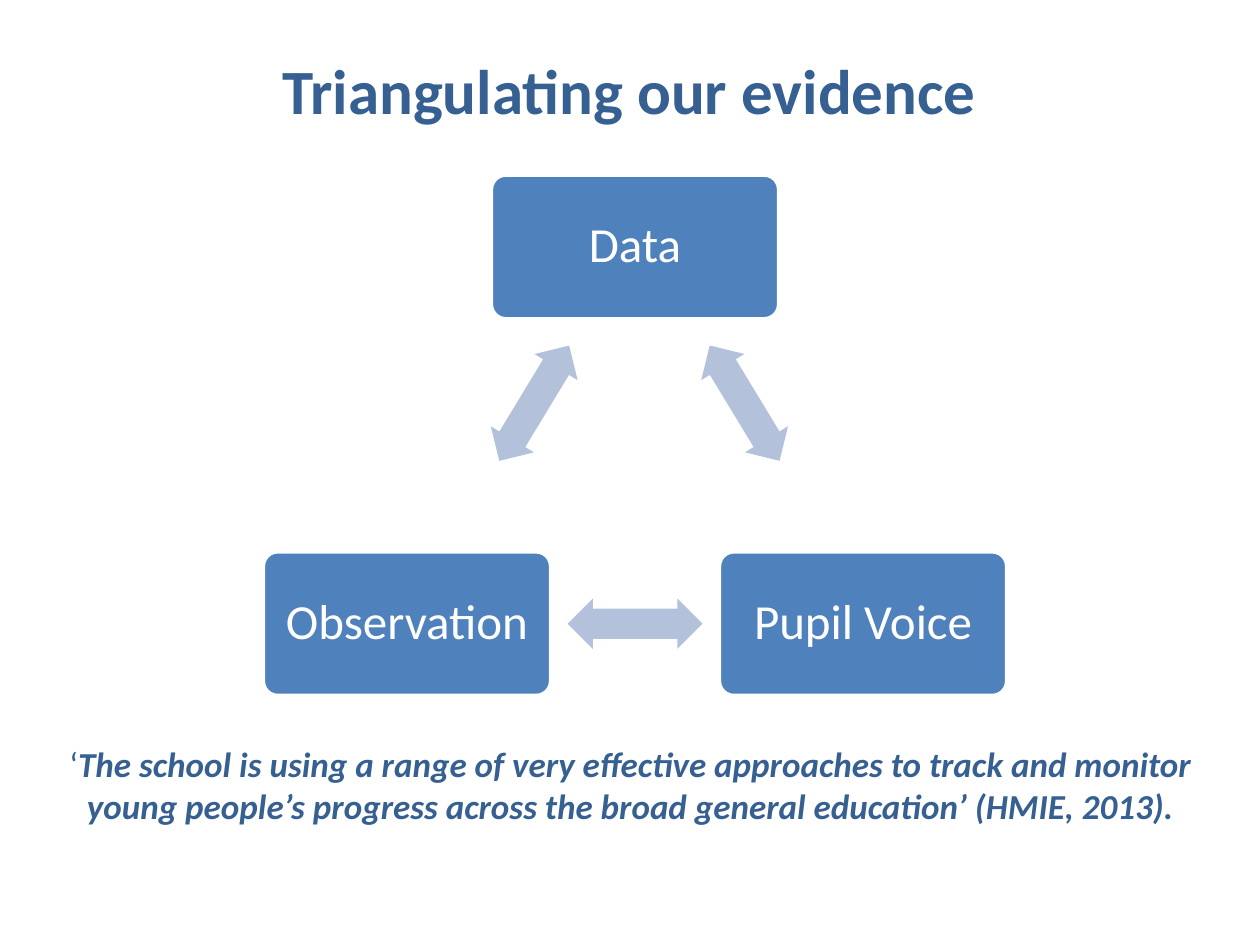
from pptx import Presentation
from pptx.dml.color import RGBColor
from pptx.enum.shapes import MSO_SHAPE as SHAPE
from pptx.enum.text import MSO_ANCHOR as ANCHOR, PP_ALIGN as ALIGN
from pptx.util import Inches, Pt

FONT = "Calibri"
NAVY, BLUE, PALE, WHITE = "376092", "4F81BD", "B3C1DB", "FFFFFF"

TITLE = "Triangulating our evidence"
QUOTE = ("The school is using a range of very effective approaches to track and "
         "monitor young people’s progress across the broad general education’ "
         "(HMIE, 2013).")
BOX_W, BOX_H = 2.28, 1.14
ARROW_W, ARROW_H = 1.07, 0.4
BOXES = [("Data", 5.04, 1.96), ("Pupil Voice", 6.85, 4.95), ("Observation", 3.23, 4.95)]
ARROWS = [(5.91, 3.2, 58.8), (5.04, 4.95, 180), (4.24, 3.2, 301.2)]


def rgb(value):
    return RGBColor.from_string(value)


def add_run(p, text, size, color, bold=False, italic=False):
    r = p.add_run()
    r.text = text
    f = r.font
    f.name, f.size, f.bold, f.italic = FONT, Pt(size), bold, italic
    f.color.rgb = rgb(color)


def add_text(s, left, top, width, height):
    tf = s.shapes.add_textbox(*map(Inches, (left, top, width, height))).text_frame
    tf.word_wrap = True
    p = tf.paragraphs[0]
    p.alignment = ALIGN.CENTER
    return p


def add_centred(s, kind, cx, cy, width, height, fill):
    sp = s.shapes.add_shape(kind, Inches(cx - width / 2), Inches(cy - height / 2),
                            Inches(width), Inches(height))
    sp.shadow.inherit = False
    sp.fill.solid()
    sp.fill.fore_color.rgb = rgb(fill)
    return sp


def add_box(s, label, cx, cy):
    sp = add_centred(s, SHAPE.ROUNDED_RECTANGLE, cx, cy, BOX_W, BOX_H, BLUE)
    sp.adjustments[0] = 0.1
    sp.line.color.rgb = rgb(WHITE)
    sp.line.width = Pt(2)
    tf = sp.text_frame
    tf.word_wrap = True
    tf.vertical_anchor = ANCHOR.MIDDLE
    tf.margin_left = tf.margin_right = tf.margin_top = tf.margin_bottom = Inches(0.12)
    p = tf.paragraphs[0]
    p.alignment = ALIGN.CENTER
    p.line_spacing = 0.9
    add_run(p, label, 28, WHITE)


def add_arrow(s, cx, cy, angle):
    sp = add_centred(s, SHAPE.LEFT_RIGHT_ARROW, cx, cy, ARROW_W, ARROW_H, PALE)
    sp.adjustments[0], sp.adjustments[1] = 0.6, 0.5
    sp.line.fill.background()
    sp.rotation = angle


def main():
    prs = Presentation()
    prs.slide_width, prs.slide_height = Inches(10), Inches(7.5)
    s = prs.slides.add_slide(prs.slide_layouts[6])
    add_run(add_text(s, 1.61, 0.36, 6.77, 1.01), TITLE, 36, NAVY, bold=True)
    for box, arrow in zip(BOXES, ARROWS):
        add_box(s, *box)
        add_arrow(s, *arrow)
    p = add_text(s, 0.2, 5.84, 9.61, 1.99)
    add_run(p, "‘", 20, NAVY)
    add_run(p, QUOTE, 20, NAVY, bold=True, italic=True)
    prs.save("out.pptx")


if __name__ == "__main__":
    main()
